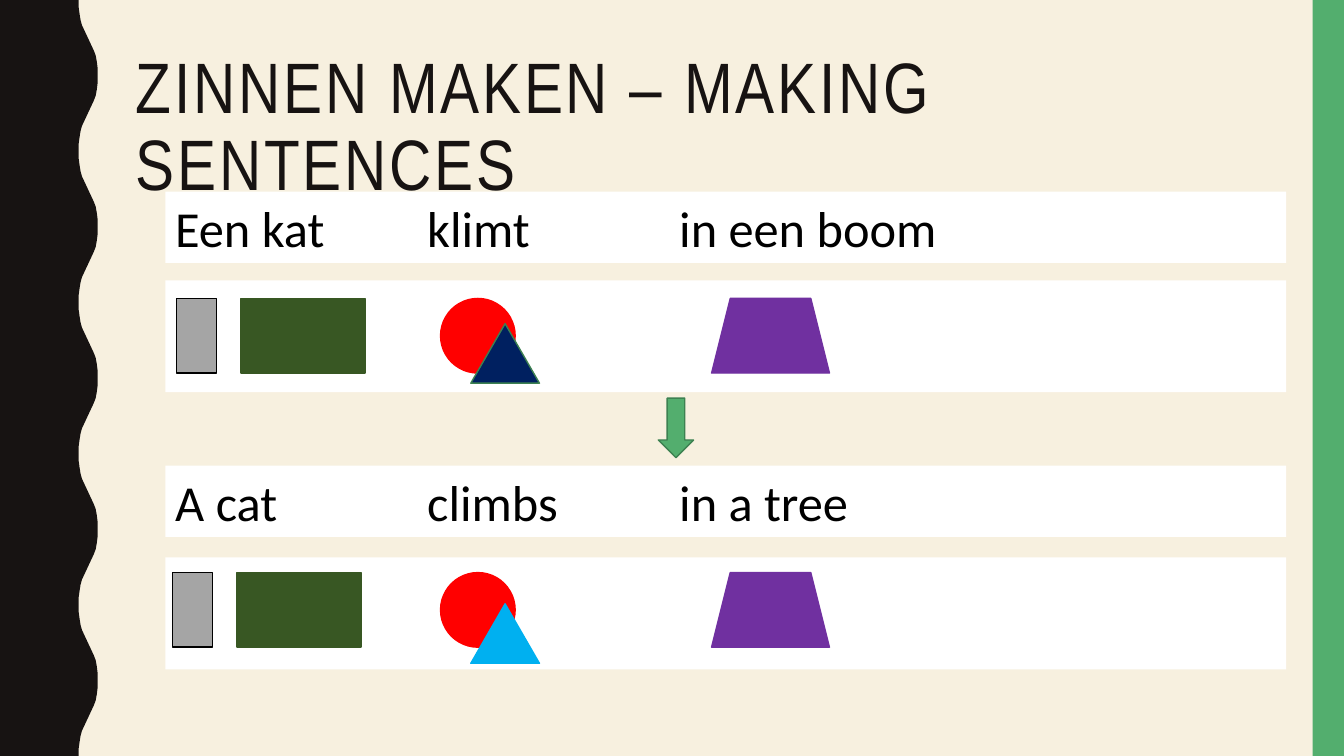
from lxml import etree
from pptx import Presentation
from pptx.dml.color import RGBColor
from pptx.enum import shapes, text
from pptx.oxml import ns
from pptx.util import Pt

SHAPE = shapes.MSO_SHAPE
WIDTH, HEIGHT = 960, 540
INK, GREEN, GREEN_LINE = "171312", "53AE6E", "3D8151"


def rgb(value):
    return RGBColor.from_string(value)


def paint(sp, fill, line=None):
    sp.shadow.inherit = False
    sp.fill.solid()
    sp.fill.fore_color.rgb = rgb(fill)
    if line:
        sp.line.color.rgb = rgb(line)
        sp.line.width = Pt(1)
    else:
        sp.line.fill.background()


def add_block(s, kind, left, top, width, height, fill, line=None):
    sp = s.shapes.add_shape(kind, Pt(left), Pt(top), Pt(width), Pt(height))
    paint(sp, fill, line)
    return sp


def set_text(sp, words, size, font, color):
    tf = sp.text_frame
    tf.word_wrap = True
    tf.vertical_anchor = text.MSO_ANCHOR.MIDDLE
    p = tf.paragraphs[0]
    p.text = words
    p.alignment = text.PP_ALIGN.LEFT
    r = p.runs[0]
    r.font.size = Pt(size)
    r.font.name = font
    r.font.color.rgb = rgb(color)
    return p


def add_wavy_edge(s, left, top, height):
    # Half a wave as (x, y); the other half mirrors it
    period = 108
    half = [(56.2, 0), (56.2, 5), (56.9, 10), (57.6, 14.4), (58.6, 18), (67, 36),
            (68.4, 39.6), (69.2, 44), (69.8, 49), (69.8, 54)]
    wave = half + [(x, period - y) for x, y in reversed(half[:-1])]
    edge = [(x, y + period * i) for i in range(height // period) for x, y in wave]
    points = [(Pt(left + x), Pt(top + y)) for x, y in edge + [(0, height)]]
    builder = s.shapes.build_freeform(Pt(left), Pt(top))
    builder.add_line_segments(points, close=True)
    paint(builder.convert_to_shape(), INK)


def add_title(s, left, top, width, height):
    sp = s.shapes.add_textbox(Pt(left), Pt(top), Pt(width), Pt(height))
    p = set_text(sp, "ZINNEN MAKEN – MAKING SENTENCES", 51, "Arial Narrow", INK)
    p.line_spacing = 0.9
    p.runs[0].font._element.set("spc", "200")


def add_sentence(s, left, top, width, words):
    sp = add_block(s, SHAPE.RECTANGLE, left, top, width, 51, "FFFFFF")
    p = set_text(sp, "\t".join(words), 36, "Calibri", "000000")
    # One tab stop per column
    tabs = etree.SubElement(p._p.get_or_add_pPr(), ns.qn("a:tabLst"))
    for column in range(1, len(words)):
        etree.SubElement(tabs, ns.qn("a:tab"), pos=str(Pt(180 * column)), algn="l")


def add_symbols(s, left, top, width, inset, subject_left, triangle_top, triangle):
    add_block(s, SHAPE.RECTANGLE, left, top, width, 80, "FFFFFF")
    row = top + inset
    # Subject: article and noun
    x = left + subject_left
    add_block(s, SHAPE.RECTANGLE, x, row, 28.8, 53.3, "A5A5A5", "000000")
    add_block(s, SHAPE.RECTANGLE, x + 46.1, row, 88.6, 53.3, "385723", "385723")
    # Verb with its tense
    add_block(s, SHAPE.FLOWCHART_CONNECTOR, left + 196.6, row, 53.3, 53.3,
              "FF0000", "FF0000")
    add_block(s, SHAPE.ISOSCELES_TRIANGLE, left + 218.2, top + triangle_top,
              49, 42.5, *triangle)
    # Place
    add_block(s, SHAPE.TRAPEZOID, left + 390.2, row, 84.2, 53.3, "7030A0", "7030A0")


def build_slide(prs):
    s = prs.slides.add_slide(prs.slide_layouts[6])
    s.background.fill.solid()
    s.background.fill.fore_color.rgb = rgb("F7F0DF")
    # Side decoration
    add_wavy_edge(s, 0, 0, HEIGHT)
    add_block(s, SHAPE.RECTANGLE, WIDTH - 22.4, 0, 22.4, HEIGHT, GREEN)
    add_title(s, 90, 33.1, 843.8, 117.4)
    # Dutch sentence, arrow, English sentence
    left, width = 118.1, 800.6
    add_sentence(s, left, 136.8, width, ["Een kat", "klimt", "in een boom"])
    add_symbols(s, left, 200.2, width, 13, 7.9, 31, ("002060", GREEN_LINE))
    add_block(s, SHAPE.DOWN_ARROW, 470.2, 284.4, 25.2, 42.5, GREEN, GREEN_LINE)
    add_sentence(s, left, 332.6, width, ["A cat", "climbs", "in a tree"])
    add_symbols(s, left, 398.2, width, 10.8, 5, 33.1, ("00B0F0", "00B0F0"))


def main():
    prs = Presentation()
    prs.slide_width, prs.slide_height = Pt(WIDTH), Pt(HEIGHT)
    build_slide(prs)
    prs.save("out.pptx")


if __name__ == "__main__":
    main()
